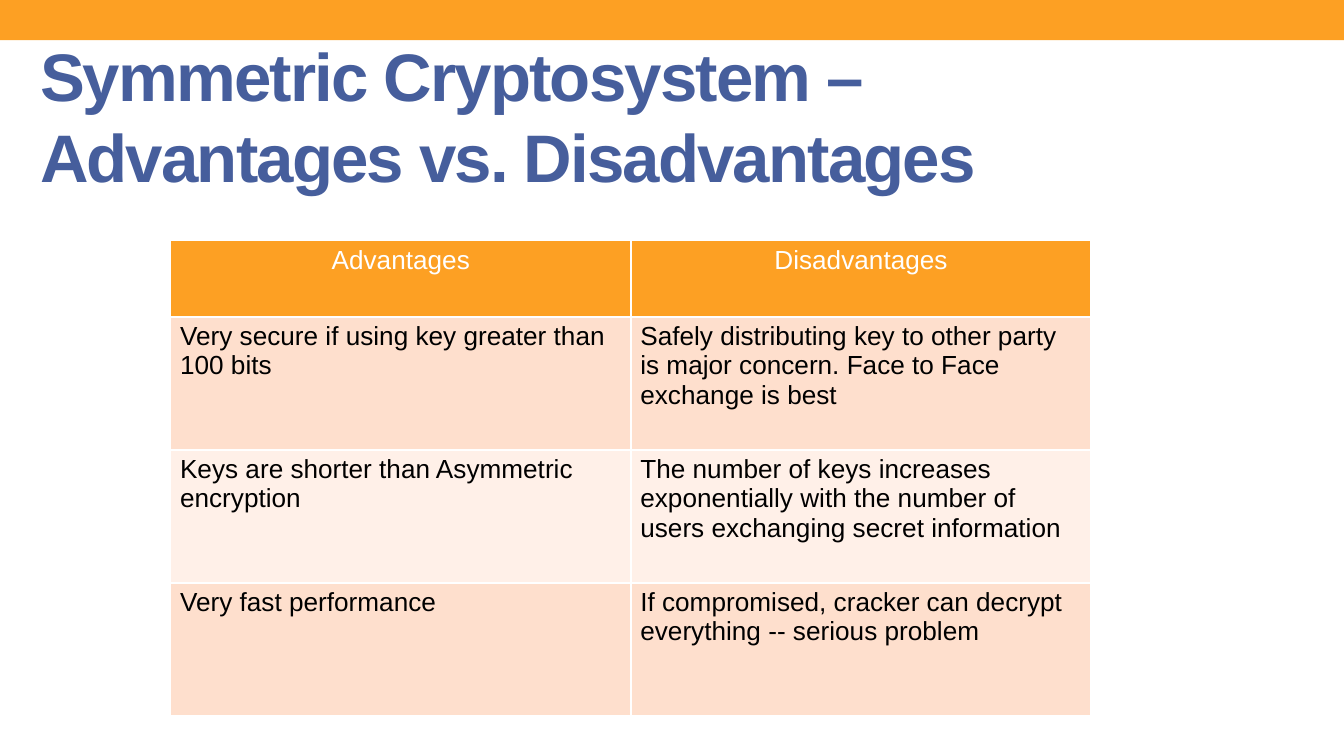
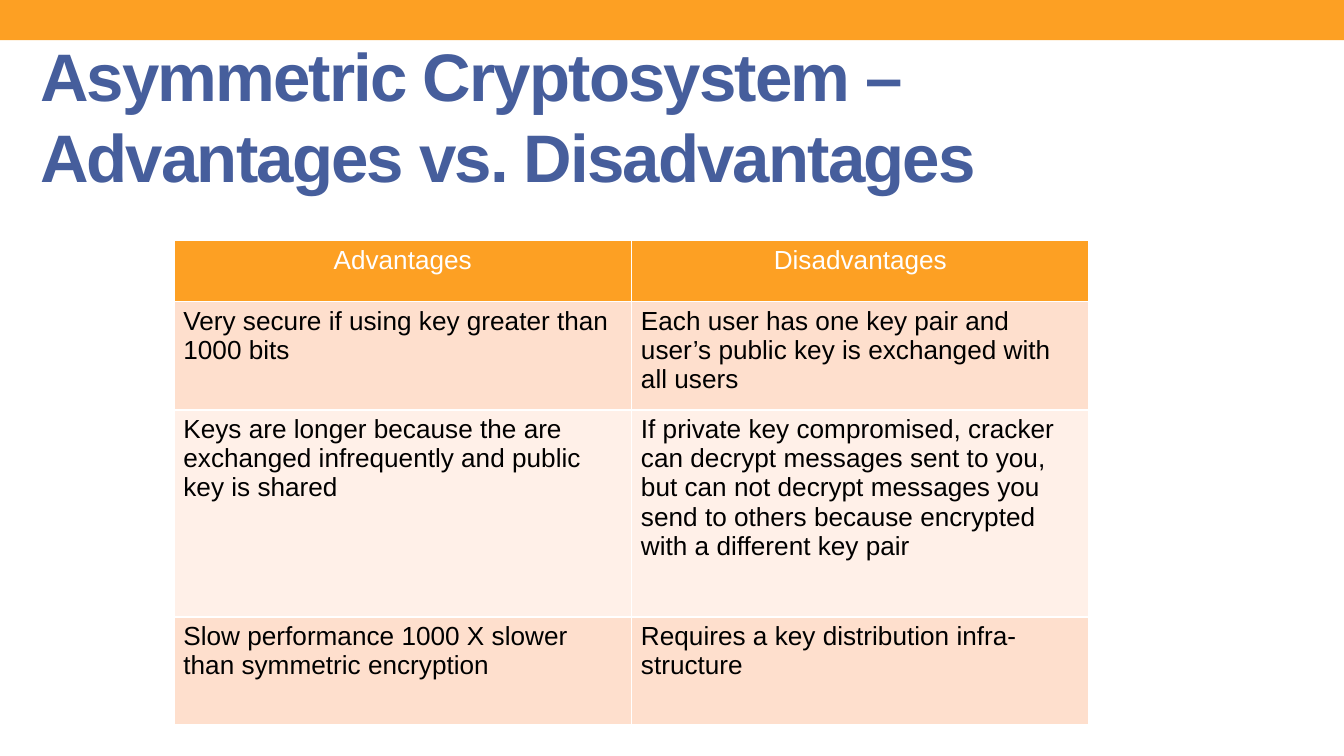
import pptx
import pptx.dml.color
import pptx.enum.shapes
import pptx.enum.text
import pptx.util

PX = 4572  # EMU per px, 200 px to the inch
SLIDE_WIDTH, SLIDE_HEIGHT = 2000, 1125
FONT = "Arial"
COLORS = {
    "band": "FDA023",
    "title": "465E9C",
    "odd_row": "FEDFCD",
    "even_row": "FFF0E8",
    "text": "000000",
    "white": "FFFFFF",
}


def rgb(name):
    return pptx.dml.color.RGBColor.from_string(COLORS[name])


class Slides:
    """Holds the shared style and the current slide."""

    def __init__(self):
        self.deck = pptx.Presentation()
        self.deck.slide_width = SLIDE_WIDTH * PX
        self.deck.slide_height = SLIDE_HEIGHT * PX
        self.page = None

    def new_page(self, title):
        self.page = self.deck.slides.add_slide(self.deck.slide_layouts[6])
        self.band()
        self.title(title)

    def band(self):
        band = self.page.shapes.add_shape(
            pptx.enum.shapes.MSO_SHAPE.RECTANGLE, 0, 0, SLIDE_WIDTH * PX, 60 * PX)
        band.shadow.inherit = False
        band.fill.solid()
        band.fill.fore_color.rgb = rgb("band")
        band.line.fill.background()

    def title(self, text):
        box = self.page.shapes.add_textbox(40 * PX, 90 * PX, 1800 * PX, 162 * PX)
        frame = box.text_frame
        frame.word_wrap = True
        frame.vertical_anchor = pptx.enum.text.MSO_ANCHOR.MIDDLE
        frame.text = text
        span = frame.paragraphs[0].runs[0]
        self.style(span, 36, "title", bold=True)
        span.font._element.set("spc", "-100")

    def style(self, span, size, color, bold=False):
        span.font.name = FONT
        span.font.size = pptx.util.Pt(size)
        span.font.bold = bold
        span.font.color.rgb = rgb(color)

    def table(self, left, top, column_width, row_heights, rows):
        """The default table style supplies the white cell borders."""
        columns = len(rows[0])
        table = self.page.shapes.add_table(
            len(rows), columns, left * PX, top * PX,
            columns * column_width * PX, sum(row_heights) * PX).table
        for column in table.columns:
            column.width = column_width * PX
        for row_index, texts in enumerate(rows):
            table.rows[row_index].height = row_heights[row_index] * PX
            for column_index, text in enumerate(texts):
                self.cell(table.cell(row_index, column_index), text, row_index)

    def cell(self, cell, text, row_index):
        header = row_index == 0
        cell.margin_left = cell.margin_right = 14 * PX
        cell.margin_top = cell.margin_bottom = 7 * PX
        cell.fill.solid()
        row_color = "odd_row" if row_index % 2 else "even_row"
        cell.fill.fore_color.rgb = rgb("band" if header else row_color)
        cell.text_frame.text = text
        para = cell.text_frame.paragraphs[0]
        if header:
            para.alignment = pptx.enum.text.PP_ALIGN.CENTER
        self.style(para.runs[0], 14, "white" if header else "text")


def main():
    slides = Slides()
    header = ("Advantages", "Disadvantages")

    # Symmetric
    slides.new_page("Symmetric Cryptosystem – Advantages vs. Disadvantages")
    slides.table(254, 358, 685, [114, 198, 198, 198], [
        header,
        ("Very secure if using key greater than 100 bits",
         "Safely distributing key to other party is major concern. "
         "Face to Face exchange is best"),
        ("Keys are shorter than Asymmetric encryption",
         "The number of keys increases exponentially with the number of "
         "users exchanging secret information"),
        ("Very fast performance",
         "If compromised, cracker can decrypt everything -- serious problem"),
    ])

    # Asymmetric
    slides.new_page("Asymmetric Cryptosystem – Advantages vs. Disadvantages")
    slides.table(259, 358, 681, [91, 161, 308, 161], [
        header,
        ("Very secure if using key greater than 1000 bits",
         "Each user has one key pair and user’s public key is exchanged "
         "with all users"),
        ("Keys are longer because the are exchanged infrequently and "
         "public key is shared",
         "If private key compromised, cracker can decrypt messages sent to "
         "you, but can not decrypt messages you send to others because "
         "encrypted with a different key pair"),
        ("Slow performance 1000 X slower than symmetric encryption",
         "Requires a key distribution infra-structure"),
    ])

    slides.deck.save("out.pptx")


if __name__ == "__main__":
    main()
